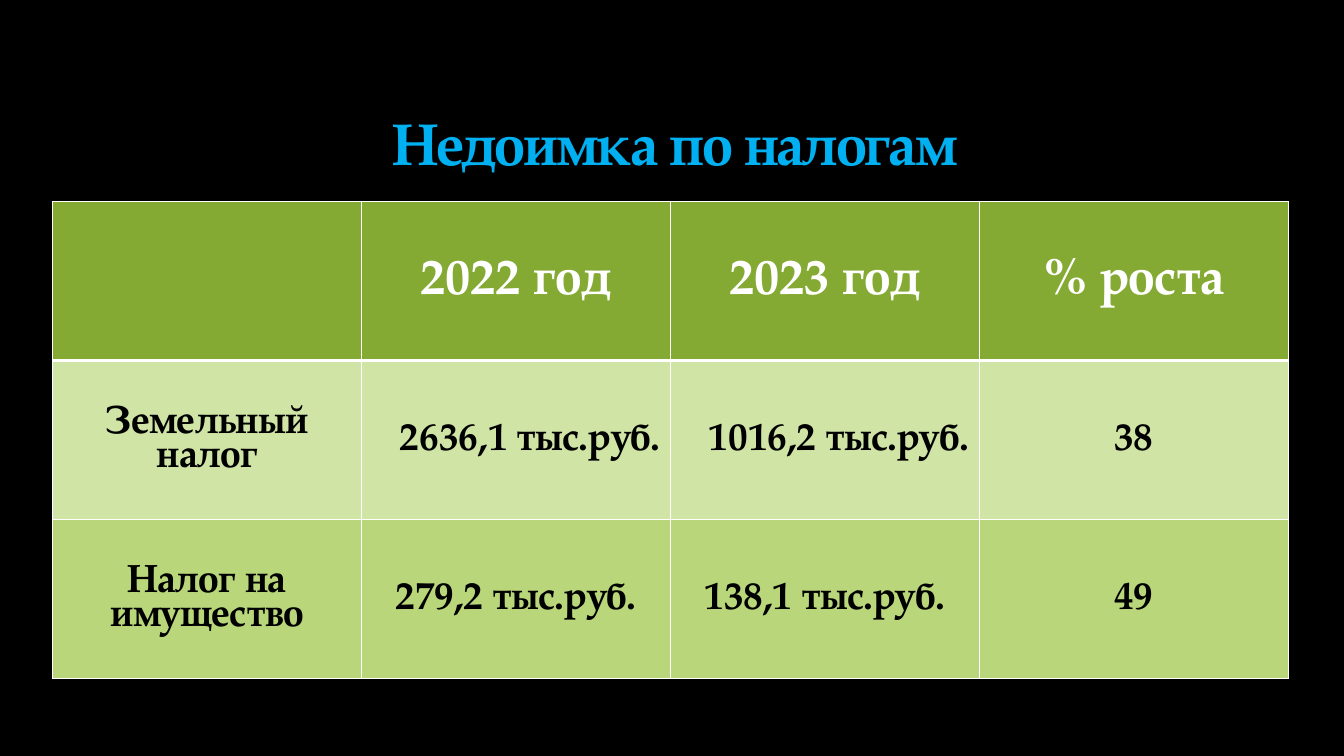
from lxml import etree
from pptx import Presentation
from pptx.dml.color import RGBColor
from pptx.enum.text import MSO_ANCHOR, PP_ALIGN
from pptx.oxml.ns import qn
from pptx.util import Pt

CENTER, RIGHT = PP_ALIGN.CENTER, PP_ALIGN.RIGHT
MIDDLE, BOTTOM = MSO_ANCHOR.MIDDLE, MSO_ANCHOR.BOTTOM

# Content
HEADING = "Недоимка по налогам"
TAX_ROWS = [
    ("", "2022 год", "2023 год", "% роста"),
    ("Земельный налог", "2636,1 тыс.руб.", "1016,2 тыс.руб.", "38"),
    ("Налог на имущество", "279,2 тыс.руб.", "138,1 тыс.руб.", "49"),
]

# Style
FONT = "TeX Gyre Pagella"
BLACK = RGBColor(0x00, 0x00, 0x00)
WHITE = RGBColor(0xFF, 0xFF, 0xFF)
BLUE = RGBColor(0x00, 0xB0, 0xF0)
OUTLINE = RGBColor(0x46, 0x22, 0x19)
# Fill, text colour and size of each row
ROW_STYLES = [
    (RGBColor(0x84, 0xAA, 0x33), WHITE, 36),
    (RGBColor(0xD0, 0xE4, 0xA6), BLACK, 28),
    (RGBColor(0xB9, 0xD7, 0x7A), BLACK, 28),
]
RIGHT_ALIGNED = {(1, 1), (1, 2)}

# Layout in points
SLIDE_W, SLIDE_H = 960, 540
HEADING_BOX = (63.36, 26.64, 837.36, 104.4)
TABLE_LEFT, TABLE_TOP, TABLE_W, TABLE_H = 37.44, 144, 882.8, 340.6


def style_text(frame, align, size, color):
    paragraph = frame.paragraphs[0]
    paragraph.alignment = align
    paragraph.line_spacing = 0.9
    for run in paragraph.runs:
        run.font.name = FONT
        run.font.size = Pt(size)
        run.font.bold = True
        run.font.color.rgb = color


def add_line(parent, tag, width, color, alpha=None):
    line = etree.SubElement(parent, qn(tag), w=str(Pt(width)))
    fill = etree.SubElement(line, qn("a:solidFill"))
    rgb = etree.SubElement(fill, qn("a:srgbClr"), val=str(color))
    if alpha is not None:
        etree.SubElement(rgb, qn("a:alpha"), val=str(alpha * 1000))
    return line


def set_borders(cell, top, bottom):
    properties = cell._tc.get_or_add_tcPr()
    widths = {"a:lnL": 1, "a:lnR": 1, "a:lnT": top, "a:lnB": bottom}
    for position, (tag, width) in enumerate(widths.items()):
        properties.insert(position, add_line(properties, tag, width, WHITE))


prs = Presentation()
prs.slide_width, prs.slide_height = Pt(SLIDE_W), Pt(SLIDE_H)
slide = prs.slides.add_slide(prs.slide_layouts[6])
slide.background.fill.solid()
slide.background.fill.fore_color.rgb = BLACK

# Heading
heading = slide.shapes.add_textbox(*map(Pt, HEADING_BOX)).text_frame
heading.word_wrap = True
heading.vertical_anchor = BOTTOM
heading.text = HEADING
style_text(heading, CENTER, 42, BLUE)
heading_props = heading.paragraphs[0].runs[0].font._element
heading_props.set("spc", "-100")
heading_props.insert(0, add_line(heading_props, "a:ln", 0.25, OUTLINE, 25))

# Tax table
row_count, column_count = len(TAX_ROWS), len(TAX_ROWS[0])
taxes = slide.shapes.add_table(
    row_count, column_count, Pt(TABLE_LEFT), Pt(TABLE_TOP), Pt(TABLE_W), Pt(TABLE_H)
).table
for column in taxes.columns:
    column.width = Pt(TABLE_W / column_count)
for row in taxes.rows:
    row.height = Pt(TABLE_H / row_count)

for r, (values, (fill, color, size)) in enumerate(zip(TAX_ROWS, ROW_STYLES)):
    for c, value in enumerate(values):
        cell = taxes.cell(r, c)
        cell.text = value
        cell.vertical_anchor = MIDDLE
        cell.fill.solid()
        cell.fill.fore_color.rgb = fill
        align = RIGHT if (r, c) in RIGHT_ALIGNED else CENTER
        style_text(cell.text_frame, align, size, color)
        set_borders(cell, top=3 if r == 1 else 1, bottom=3 if r == 0 else 1)

prs.save("out.pptx")
